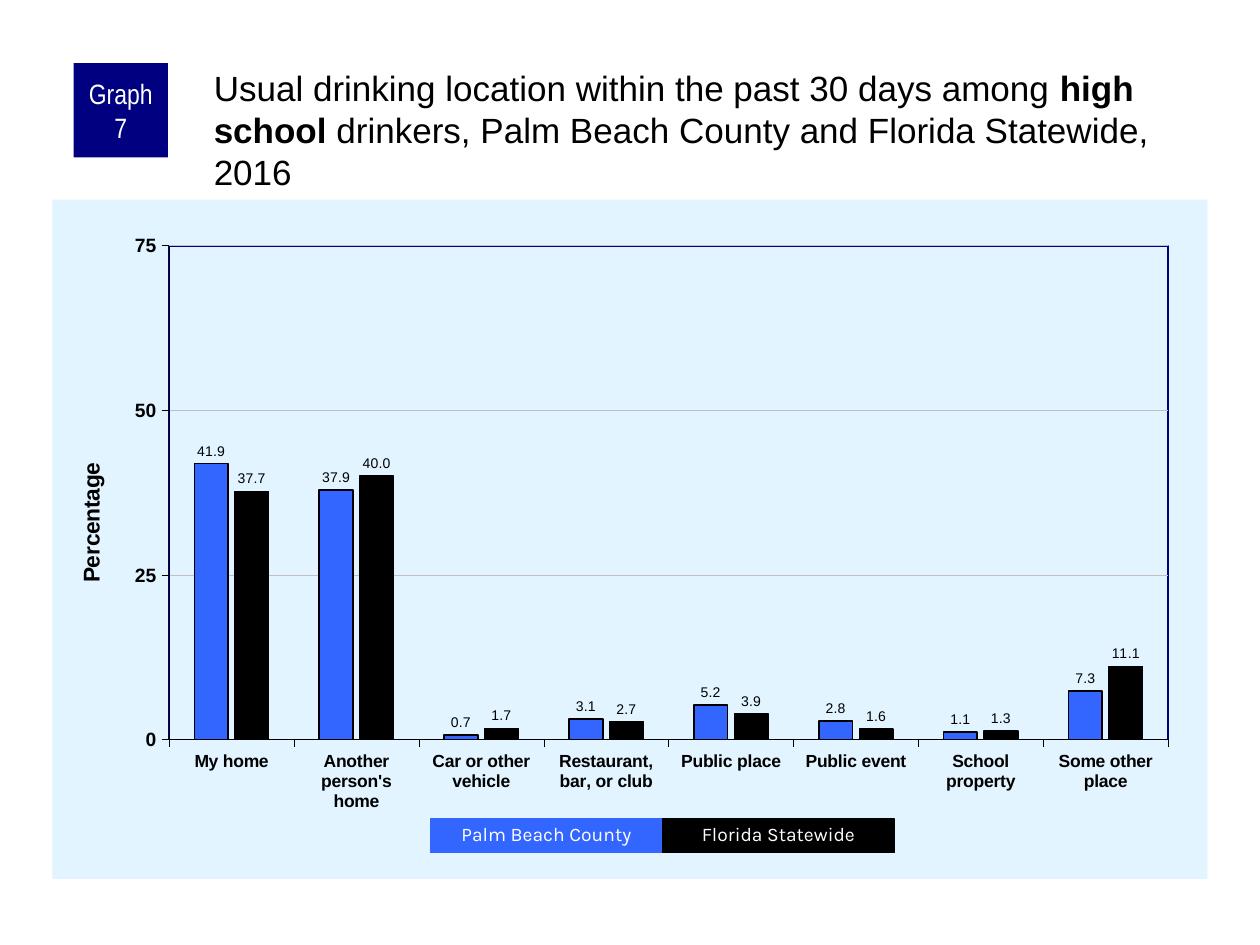
import pptx
import pptx.chart.data
import pptx.dml.color
import pptx.enum.chart
import pptx.enum.shapes
import pptx.enum.text
import pptx.oxml
import pptx.util

Pt = pptx.util.Pt
Inches = pptx.util.Inches
PP_ALIGN = pptx.enum.text.PP_ALIGN
ANCHOR = pptx.enum.text.MSO_ANCHOR
AUTO_SIZE = pptx.enum.text.MSO_AUTO_SIZE

THEME = {
    "navy": "000080", "blue": "3366FF", "black": "000000", "white": "FFFFFF",
    "panel": "E1F4FF", "grid": "C0C0C0",
    "font": "Arial", "narrow": "Arial Narrow", "legend_font": "Karla",
    "title": 20, "badge": 16, "axis_title": 13, "chart": 11.5,
    "legend": 11, "values": 11, "categories": 10, "labels": 8,
}
RGB = {name: pptx.dml.color.RGBColor.from_string(THEME[name])
       for name in ("navy", "blue", "black", "white", "panel", "grid")}


def cells(*counts):
    """Turn columns and rows of the 120 by 90 slide grid into lengths."""
    return [int(n * prs.slide_width / 120) for n in counts]


def write(tf, runs, size, font="font", color="black", align=PP_ALIGN.LEFT,
          anchor=ANCHOR.TOP, insets=(0.1, 0.05, 0.1, 0.05), spacing=1.0,
          fit=AUTO_SIZE.NONE):
    """Fill a text frame with one paragraph of (text, bold) runs."""
    tf.word_wrap = True
    tf.auto_size = fit
    tf.vertical_anchor = anchor
    tf.margin_left, tf.margin_top, tf.margin_right, tf.margin_bottom = map(Inches, insets)
    p = tf.paragraphs[0]
    p.alignment = align
    p.line_spacing = spacing
    for text, bold in runs:
        r = p.add_run()
        r.text = text
        r.font.name = THEME[font]
        r.font.size = Pt(THEME[size])
        r.font.bold = bold
        r.font.color.rgb = RGB[color]


prs = pptx.Presentation()
prs.slide_width, prs.slide_height = Inches(10), Inches(7.5)
s = prs.slides.add_slide(prs.slide_layouts[5])

# Title
title = s.shapes.title
title.left, title.top, title.width, title.height = cells(20, 6, 95, 10)
write(title.text_frame,
      [("Usual drinking location within the past 30 days among ", False),
       ("high school", True),
       (" drinkers, Palm Beach County and Florida Statewide, 2016", False)],
      size="title", insets=(0.03, 0.03, 0, 0))

# Chart
regions = [
    ("Palm Beach County", "blue", 1, "0.0", (41.9, 37.9, 0.7, 3.1, 5.2, 2.8, 1.1, 7.3)),
    ("Florida Statewide", "black", 0.75, "#,##0.0", (37.7, 40.0, 1.7, 2.7, 3.9, 1.6, 1.3, 11.1)),
]
data = pptx.chart.data.CategoryChartData()
data.categories = ["My home", "Another person's home", "Car or other vehicle",
                   "Restaurant, bar, or club", "Public place", "Public event",
                   "School property", "Some other place"]
for name, color, line_width, number_format, values in regions:
    data.add_series(name, values)
chart = s.shapes.add_chart(pptx.enum.chart.XL_CHART_TYPE.COLUMN_CLUSTERED,
                           *cells(5, 19, 110, 64.7), data).chart
chart.has_legend = False
chart.has_title = False
chart.font.name = THEME["font"]
chart.font.size = Pt(THEME["chart"])
chart.font.color.rgb = RGB["black"]

plot = chart.plots[0]
plot.gap_width, plot.overlap = 150, -20
plot.vary_by_categories = False
for series, (name, color, line_width, number_format, values) in zip(plot.series, regions):
    series.invert_if_negative = False
    series.format.fill.solid()
    series.format.fill.fore_color.rgb = RGB[color]
    series.format.line.color.rgb = RGB["black"]
    series.format.line.width = Pt(line_width)
    labels = series.data_labels
    labels.show_value = True
    labels.position = pptx.enum.chart.XL_LABEL_POSITION.OUTSIDE_END
    labels.number_format, labels.number_format_is_linked = number_format, False
    labels.font.name = THEME["font"]
    labels.font.size = Pt(THEME["labels"])
    labels.font.color.rgb = RGB["black"]

for axis, size in ((chart.category_axis, "categories"), (chart.value_axis, "values")):
    axis.major_tick_mark = pptx.enum.chart.XL_TICK_MARK.OUTSIDE
    axis.minor_tick_mark = pptx.enum.chart.XL_TICK_MARK.NONE
    axis.format.line.color.rgb = RGB["black"]
    axis.format.line.width = Pt(0.25)
    axis.tick_labels.font.name = THEME["font"]
    axis.tick_labels.font.size = Pt(THEME[size])
    axis.tick_labels.font.bold = True
    axis.tick_labels.font.color.rgb = RGB["black"]

axis = chart.value_axis
axis.minimum_scale, axis.maximum_scale, axis.major_unit = 0, 75, 25
axis.tick_labels.number_format, axis.tick_labels.number_format_is_linked = "0", False
axis.major_gridlines.format.line.color.rgb = RGB["grid"]
axis.major_gridlines.format.line.width = Pt(0.25)
r = axis.axis_title.text_frame.paragraphs[0].add_run()
r.text = "Percentage"
r.font.name = THEME["font"]
r.font.size = Pt(THEME["axis_title"])
r.font.bold = True
r.font.color.rgb = RGB["black"]

# Chart panel, plot frame and plot position
NS = ('xmlns:c="http://schemas.openxmlformats.org/drawingml/2006/chart" '
      'xmlns:a="http://schemas.openxmlformats.org/drawingml/2006/main"')
chart_space = chart.element
plot_area = chart_space.chart.plotArea
for layout in plot_area.findall("{*}layout"):
    plot_area.remove(layout)
sides = "".join(f'<c:{tag} val="{share}"/>' for tag, share in
                (("x", 0.101), ("y", 0.068), ("w", 0.865), ("h", 0.727)))
plot_area.insert(0, pptx.oxml.parse_xml(
    f'<c:layout {NS}><c:manualLayout><c:layoutTarget val="inner"/>'
    f'<c:xMode val="edge"/><c:yMode val="edge"/>{sides}</c:manualLayout></c:layout>'))
plot_area.append(pptx.oxml.parse_xml(
    f'<c:spPr {NS}><a:noFill/><a:ln w="{Pt(1)}"><a:solidFill>'
    f'<a:srgbClr val="{THEME["navy"]}"/></a:solidFill></a:ln></c:spPr>'))
chart_space.chart.addnext(pptx.oxml.parse_xml(
    f'<c:spPr {NS}><a:solidFill><a:srgbClr val="{THEME["panel"]}"/></a:solidFill>'
    '<a:ln><a:noFill/></a:ln></c:spPr>'))

# Graph number and legend boxes
boxes = [("Graph 7", "navy", (7, 6, 9, 9),
          dict(size="badge", font="narrow", insets=(0.05, 0, 0.05, 0)))]
for i, (name, color, *rest) in enumerate(regions):
    boxes.append((name, color, (41 + 22.1 * i, 78, 22.1, 3.2),
                  dict(size="legend", font="legend_font", spacing=0.9,
                       fit=AUTO_SIZE.SHAPE_TO_FIT_TEXT)))
for text, color, place, text_format in boxes:
    sp = s.shapes.add_shape(pptx.enum.shapes.MSO_SHAPE.RECTANGLE, *cells(*place))
    sp.shadow.inherit = False
    sp.fill.solid()
    sp.fill.fore_color.rgb = RGB[color]
    if color == "navy":
        sp.line.fill.background()
    else:
        sp.line.color.rgb = RGB[color]
        sp.line.width = Pt(0.75)
    write(sp.text_frame, [(text, False)], color="white", align=PP_ALIGN.CENTER,
          anchor=ANCHOR.MIDDLE if color == "navy" else ANCHOR.TOP, **text_format)

prs.save("out.pptx")
